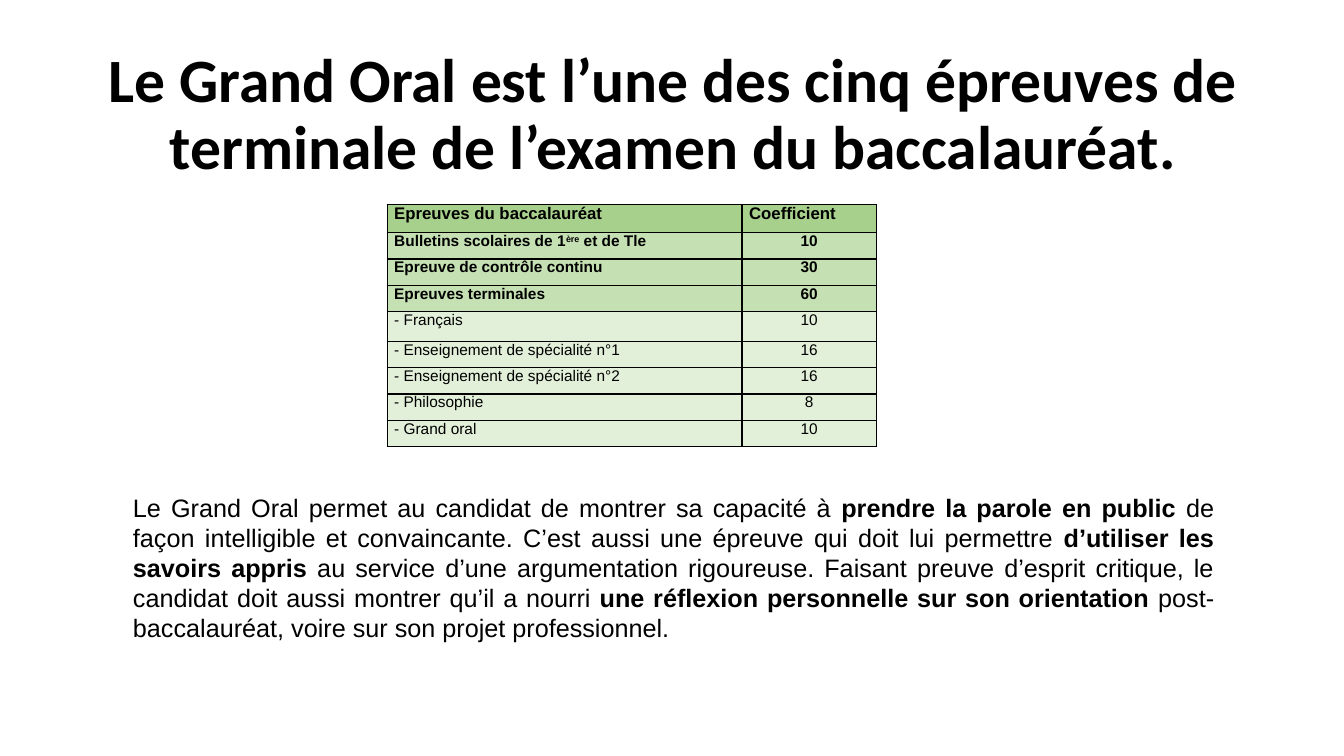
from pptx import Presentation
from pptx.dml.color import RGBColor
from pptx.enum.text import MSO_ANCHOR, MSO_AUTO_SIZE, PP_ALIGN
from pptx.oxml import parse_xml
from pptx.oxml.ns import nsdecls
from pptx.util import Inches, Pt

BLACK = RGBColor(0, 0, 0)
HEAD = RGBColor(0xA8, 0xD0, 0x8D)
MAIN = RGBColor(0xC5, 0xE0, 0xB3)
PART = RGBColor(0xE2, 0xEF, 0xD9)

TITLE = "Le Grand Oral est l’une des cinq épreuves de terminale de l’examen du baccalauréat."
# Odd-numbered pieces of a label are superscript.
EXAMS = [
    (["Epreuves du baccalauréat"], "Coefficient", HEAD),
    (["Bulletins scolaires de 1", "ère", " et de Tle"], "10", MAIN),
    (["Epreuve de contrôle continu"], "30", MAIN),
    (["Epreuves terminales"], "60", MAIN),
    (["- Français"], "10", PART),
    (["- Enseignement de spécialité n°1"], "16", PART),
    (["- Enseignement de spécialité n°2"], "16", PART),
    (["- Philosophie"], "8", PART),
    (["- Grand oral"], "10", PART),
]
COLS = [3.52, 1.33]
ROWS = [0.28] + [0.26] * 3 + [0.3] + [0.26] * 4
# Odd-numbered pieces are bold.
GOALS = [
    "Le Grand Oral permet au candidat de montrer sa capacité à ",
    "prendre la parole en public ",
    "de façon intelligible et convaincante. C’est aussi une épreuve qui doit lui permettre ",
    "d’utiliser les savoirs appris ",
    "au service d’une argumentation rigoureuse. Faisant preuve d’esprit critique, "
    "le candidat doit aussi montrer qu’il a nourri ",
    "une réflexion personnelle sur son orientation ",
    "post-baccalauréat, voire sur son projet professionnel.",
]


def style(para, name, size, align, bold=None):
    para.alignment = align
    font = para.font
    font.name, font.size, font.bold = name, Pt(size), bold
    font.color.rgb = BLACK


def add_runs(para, parts):
    """Add one run per part and return the odd-numbered ones."""
    runs = []
    for part in parts:
        run = para.add_run()
        run.text = part
        runs.append(run)
    return runs[1::2]


def set_title(slide, left, top, width, height):
    title = slide.shapes.title
    title.left, title.top = Inches(left), Inches(top)
    title.width, title.height = Inches(width), Inches(height)
    frame = title.text_frame
    frame.text = TITLE
    frame.word_wrap = True
    frame.auto_size = MSO_AUTO_SIZE.NONE
    frame.vertical_anchor = MSO_ANCHOR.MIDDLE
    frame.margin_bottom = Inches(0.72)
    para = frame.paragraphs[0]
    para.line_spacing = 0.9
    style(para, "Calibri", 44, PP_ALIGN.CENTER, True)


def add_border(cell):
    props = cell._tc.get_or_add_tcPr()
    for spot, side in enumerate(("lnL", "lnR", "lnT", "lnB")):
        props.insert(spot, parse_xml(
            f'<a:{side} {nsdecls("a")} w="{Pt(1)}"><a:solidFill>'
            f'<a:srgbClr val="{BLACK}"/></a:solidFill></a:{side}>'))


def add_exams(slide, left, top):
    table = slide.shapes.add_table(
        len(ROWS), len(COLS), Inches(left), Inches(top),
        Inches(sum(COLS)), Inches(sum(ROWS))).table
    for col, width in zip(table.columns, COLS):
        col.width = Inches(width)
    for row, height, (label, weight, fill) in zip(table.rows, ROWS, EXAMS):
        row.height = Inches(height)
        for cell, parts in zip(row.cells, (label, [weight])):
            cell.fill.solid()
            cell.fill.fore_color.rgb = fill
            cell.margin_left = cell.margin_right = Inches(0.07)
            cell.margin_top = cell.margin_bottom = 0
            para = cell.text_frame.paragraphs[0]
            for run in add_runs(para, parts):
                run.font._element.set("baseline", "30000")
            head = fill == HEAD
            left_side = head or parts is label
            style(para, "Arial", 12 if head else 11,
                  PP_ALIGN.JUSTIFY if left_side else PP_ALIGN.CENTER, fill != PART)
            add_border(cell)


def add_goals(slide, left, top, width, height):
    box = slide.shapes.add_textbox(Inches(left), Inches(top), Inches(width), Inches(height))
    frame = box.text_frame
    frame.word_wrap = True
    frame.auto_size = MSO_AUTO_SIZE.SHAPE_TO_FIT_TEXT
    para = frame.paragraphs[0]
    style(para, "Arial", 18, PP_ALIGN.JUSTIFY)
    for run in add_runs(para, GOALS):
        run.font.bold = True


def main():
    deck = Presentation()
    deck.slide_width, deck.slide_height = Inches(13.33), Inches(7.5)
    slide = deck.slides.add_slide(deck.slide_layouts[5])
    set_title(slide, 0.93, 0.76, 11.5, 1.45)
    add_exams(slide, 3.84, 2.03)
    add_goals(slide, 1.22, 4.83, 10.92, 1.92)
    deck.save("out.pptx")


if __name__ == "__main__":
    main()
